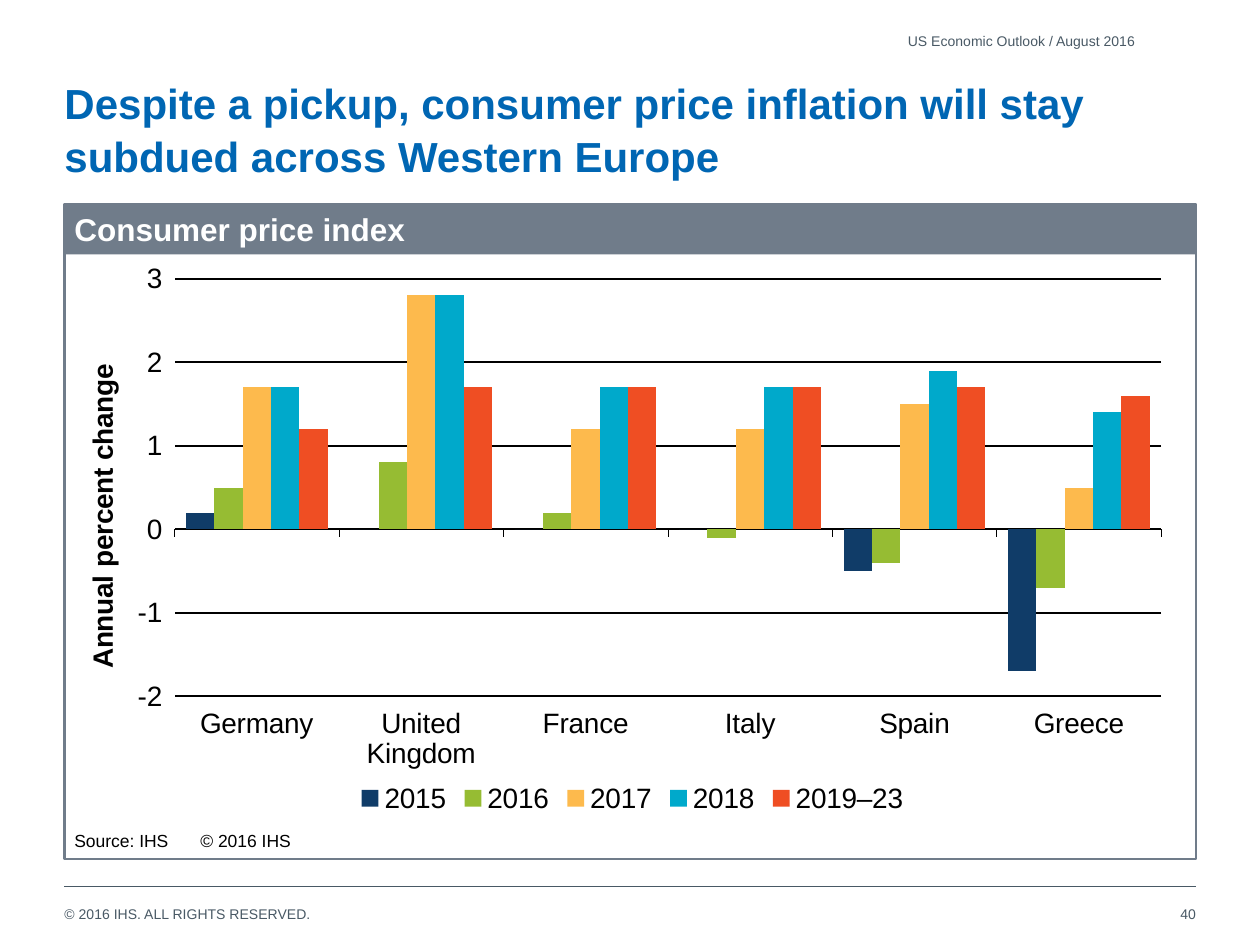
from dataclasses import dataclass

import pptx
import pptx.chart.data
import pptx.dml.color
import pptx.enum.chart
import pptx.enum.shapes
import pptx.enum.text
import pptx.oxml
import pptx.oxml.ns
import pptx.util
from lxml import etree

Cm = pptx.util.Cm
Pt = pptx.util.Pt
RGBColor = pptx.dml.color.RGBColor
Align = pptx.enum.text.PP_ALIGN
Anchor = pptx.enum.text.MSO_ANCHOR
qn = pptx.oxml.ns.qn

FONT = "Arial"
BLACK = RGBColor(0x00, 0x00, 0x00)
WHITE = RGBColor(0xFF, 0xFF, 0xFF)
BLUE = RGBColor(0x00, 0x66, 0xB3)
SLATE = RGBColor(0x49, 0x59, 0x65)
GRAY = RGBColor(0x70, 0x7C, 0x8A)
NAVY = RGBColor(0x10, 0x3C, 0x68)
GREEN = RGBColor(0x96, 0xBC, 0x33)
AMBER = RGBColor(0xFD, 0xBA, 0x4D)
CYAN = RGBColor(0x00, 0xA9, 0xCB)
RED = RGBColor(0xEF, 0x4E, 0x23)

LEFT, WIDTH = 1.3, 22.81
RIGHT = LEFT + WIDTH
TOP = 4.11


@dataclass
class Box:
    left: float
    top: float
    width: float
    height: float

    def lengths(self) -> tuple:
        return Cm(self.left), Cm(self.top), Cm(self.width), Cm(self.height)


@dataclass
class Label:
    text: str
    box: Box
    size: int = 8
    color: RGBColor = SLATE
    align: Align = Align.LEFT
    anchor: Anchor = Anchor.MIDDLE
    inset: tuple = (0, 0)


@dataclass
class Series:
    name: str
    color: RGBColor
    values: tuple


LABELS = (
    Label("© 2016 IHS. ALL RIGHTS RESERVED.", Box(LEFT, 18.26, 17.4, 0.33),
          anchor=Anchor.TOP),
    Label("40", Box(RIGHT - 5.74, 17.91, 5.74, 1.02), align=Align.RIGHT),
    Label("US Economic Outlook / August 2016", Box(LEFT, 0.53, 21.59, 0.61),
          align=Align.RIGHT),
    Label("Source: IHS\t© 2016 IHS", Box(LEFT, 16.54, WIDTH, 0.79),
          size=10, color=BLACK, inset=(0.2, 0.2)),
)

LANDS = ("Germany", "United Kingdom", "France", "Italy", "Spain", "Greece")
SERIES = (
    Series("2015", NAVY, (0.2, 0, 0, 0, -0.5, -1.7)),
    Series("2016", GREEN, (0.5, 0.8, 0.2, -0.1, -0.4, -0.7)),
    Series("2017", AMBER, (1.7, 2.8, 1.2, 1.2, 1.5, 0.5)),
    Series("2018", CYAN, (1.7, 2.8, 1.7, 1.7, 1.9, 1.4)),
    Series("2019–23", RED, (1.2, 1.7, 1.7, 1.7, 1.7, 1.6)),
)


def style(font, size: int, color: RGBColor, bold: bool = False) -> None:
    font.name, font.size, font.bold = FONT, Pt(size), bold
    font.color.rgb = color


def write(shape, text: str, *, size: int, color: RGBColor, bold: bool = False,
          align: Align = Align.LEFT, anchor: Anchor = Anchor.MIDDLE,
          inset: tuple = (0, 0), pitch: float = 1.0) -> None:
    """Fill a shape with one paragraph; inset is (sides, top and bottom)."""
    frame = shape.text_frame
    frame.word_wrap = True
    frame.auto_size = pptx.enum.text.MSO_AUTO_SIZE.NONE
    frame.vertical_anchor = anchor
    frame.margin_left = frame.margin_right = Cm(inset[0])
    frame.margin_top = frame.margin_bottom = Cm(inset[1])
    frame.text = text
    par = frame.paragraphs[0]
    par.alignment = align
    par.line_spacing = pitch
    style(par.runs[0].font, size, color, bold)


def add_label(slide, label: Label) -> None:
    shape = slide.shapes.add_textbox(*label.box.lengths())
    write(shape, label.text, size=label.size, color=label.color,
          align=label.align, anchor=label.anchor, inset=label.inset)


def add_rect(slide, box: Box):
    """Add a rectangle with no shadow, fill or line."""
    kind = pptx.enum.shapes.MSO_SHAPE.RECTANGLE
    rect = slide.shapes.add_shape(kind, *box.lengths())
    rect.shadow.inherit = False
    rect.fill.background()
    rect.line.fill.background()
    return rect


def add_rule(slide, top: float) -> None:
    rule = slide.shapes.add_connector(
        pptx.enum.shapes.MSO_CONNECTOR.STRAIGHT,
        Cm(LEFT), Cm(top), Cm(RIGHT), Cm(top))
    rule.line.color.rgb = SLATE
    rule.line.width = Pt(0.5)
    etree.SubElement(rule._element.spPr, qn("a:effectLst"))


def place_plot(chart, x: float, y: float, w: float, h: float) -> None:
    """Fix the inner plot area, in fractions of the chart."""
    area = chart._chartSpace.chart.plotArea
    for old in area.findall(qn("c:layout")):
        area.remove(old)
    layout = etree.Element(qn("c:layout"))
    area.insert(0, layout)
    manual = etree.SubElement(layout, qn("c:manualLayout"))
    parts = {"layoutTarget": "inner", "xMode": "edge", "yMode": "edge",
             "x": x, "y": y, "w": w, "h": h}
    for name, value in parts.items():
        etree.SubElement(manual, qn(f"c:{name}")).set("val", str(value))


def add_chart(slide, box: Box) -> None:
    enum = pptx.enum.chart
    data = pptx.chart.data.CategoryChartData(number_format="0.0")
    data.categories = LANDS
    for item in SERIES:
        data.add_series(item.name, item.values)
    chart = slide.shapes.add_chart(
        enum.XL_CHART_TYPE.COLUMN_CLUSTERED, *box.lengths(), data).chart
    style(chart.font, 16, BLACK)
    chart.has_title = False
    chart.has_legend = True
    chart.legend.position = enum.XL_LEGEND_POSITION.BOTTOM
    chart.legend.include_in_layout = False

    plot = chart.plots[0]
    plot.gap_width, plot.overlap = 80, 0
    plot.vary_by_categories = False
    for bars, item in zip(plot.series, SERIES):
        bars.invert_if_negative = False
        bars.format.fill.solid()
        bars.format.fill.fore_color.rgb = item.color

    lands = chart.category_axis
    lands.tick_label_position = enum.XL_TICK_LABEL_POSITION.LOW
    lands.major_tick_mark = enum.XL_TICK_MARK.OUTSIDE
    lands.format.line.color.rgb = BLACK
    lands.format.line.width = Pt(0.25)

    rates = chart.value_axis
    rates.minimum_scale, rates.maximum_scale, rates.major_unit = -2, 3, 1
    rates.major_tick_mark = enum.XL_TICK_MARK.OUTSIDE
    rates.tick_labels.number_format = "0"
    rates.tick_labels.number_format_is_linked = False
    rates.format.line.fill.background()
    rates.major_gridlines.format.line.color.rgb = BLACK
    rates.major_gridlines.format.line.width = Pt(1)
    frame = rates.axis_title.text_frame
    frame.text = "Annual percent change"
    style(frame.paragraphs[0].runs[0].font, 16, BLACK, bold=True)
    place_plot(chart, 0.086, 0.043, 0.892, 0.74)


def main() -> None:
    deck = pptx.Presentation()
    deck.slide_width, deck.slide_height = Cm(25.4), Cm(19.05)
    slide = deck.slides.add_slide(deck.slide_layouts[5])

    title = slide.shapes.title
    title.left, title.top, title.width, title.height = Box(
        LEFT, 1.52, WIDTH, 2.21).lengths()
    write(title, "Despite a pickup, consumer price inflation will stay "
          "subdued across Western Europe", size=24, color=BLUE, bold=True,
          anchor=Anchor.TOP, pitch=1.05)

    add_rule(slide, 17.86)
    add_chart(slide, Box(1.6, 5.13, 22.3, 11.38))
    band = add_rect(slide, Box(LEFT, TOP, WIDTH, 1.02))
    band.fill.solid()
    band.fill.fore_color.rgb = GRAY
    write(band, "Consumer price index", size=18, color=WHITE, bold=True,
          inset=(0.2, 0.1))
    panel = add_rect(slide, Box(LEFT, TOP, WIDTH, 13.21))
    panel.line.color.rgb = GRAY
    panel.line.width = Pt(1.5)
    for label in LABELS:
        add_label(slide, label)
    deck.save("out.pptx")


if __name__ == "__main__":
    main()
